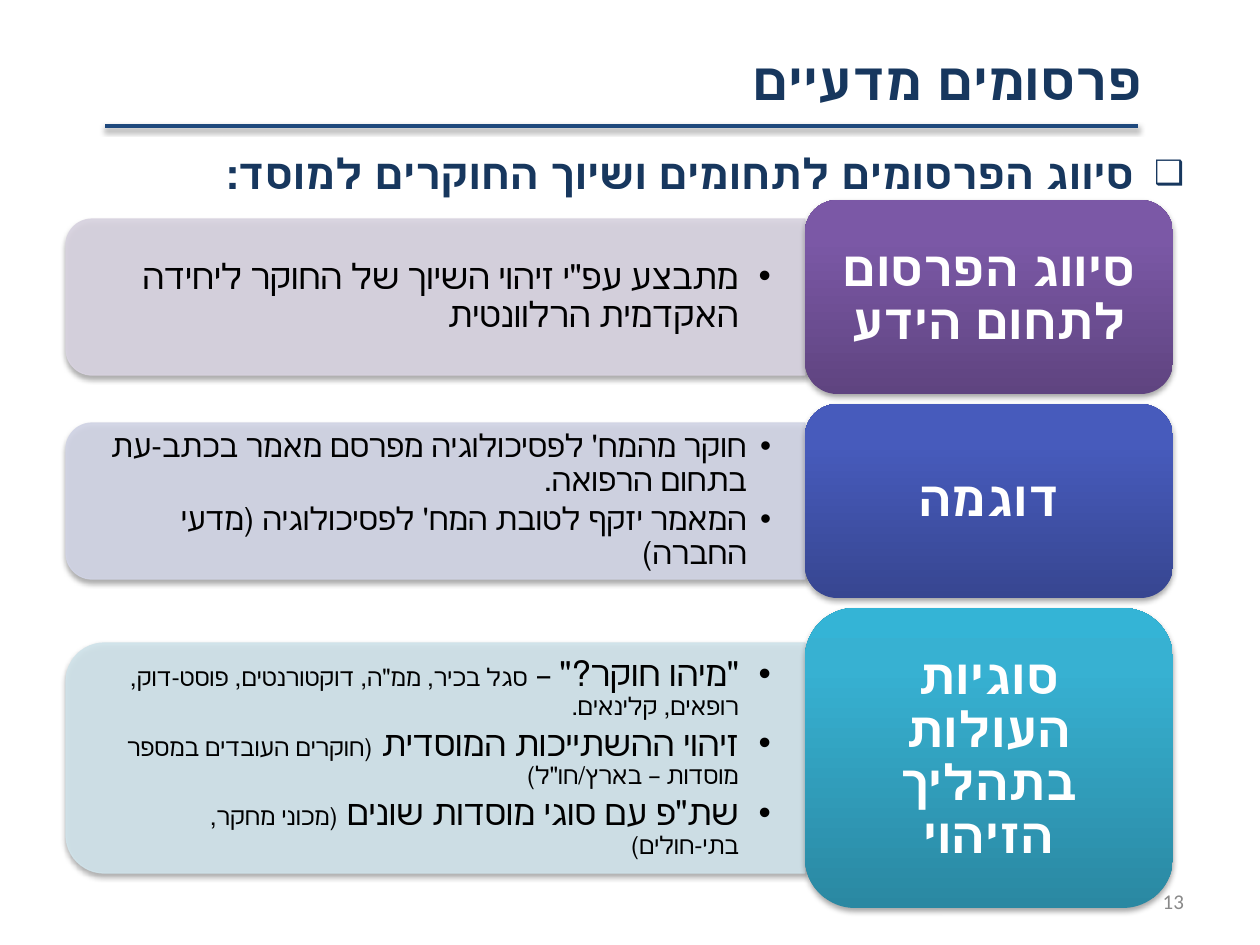
from copy import deepcopy
from dataclasses import dataclass

from lxml import etree
from pptx import Presentation
from pptx import util as u
from pptx.dml.color import RGBColor
from pptx.enum import lang, shapes, text
from pptx.oxml import ns

EMU_PER_PX = 914400 / 126
COLORS = {"navy": "17375E", "rule": "1F497D", "grey": "898989",
          "black": "000000", "white": "FFFFFF"}
LEFT, SPLIT, RIGHT = 66, 805, 1173   # panel start, panel/block border, block end
FIRST_TOP, GAP = 200, 10
CORNER_INSET = 0.05                  # share of a panel's height taken by its corners


@dataclass
class Span:
    text: str
    size: int


@dataclass
class Row:
    heading: str
    bullets: list[list[Span]]
    height: int
    panel_height: int
    indent: int
    panel_color: str
    gradient: tuple[str, str, str]


ROWS = [
    Row("סיווג הפרסום לתחום הידע",
        [[Span("מתבצע עפ\"י זיהוי השיוך של החוקר ליחידה האקדמית הרלוונטית", 20)]],
        194, 156, 32, "D8D3E0", ("5F4480", "7B58A6", "7C57A8")),
    Row("דוגמה",
        [[Span("חוקר מהמח' לפסיכולוגיה מפרסם מאמר בכתב-עת בתחום הרפואה.", 18)],
         [Span("המאמר יזקף לטובת המח' לפסיכולוגיה (מדעי החברה)", 18)]],
        194, 156, 24, "D1D4E5", ("374691", "475BBC", "455ABF")),
    Row("סוגיות העולות בתהליך הזיהוי",
        [[Span("\"מיהו חוקר?\"", 20), Span(" – ", 18),
          Span("סגל בכיר, ממ\"ה, דוקטורנטים, פוסט-דוק, רופאים, קלינאים.", 14)],
         [Span("זיהוי ההשתייכות המוסדית ", 20),
          Span("(חוקרים העובדים במספר מוסדות – בארץ/חו\"ל)", 14)],
         [Span("שת\"פ עם סוגי מוסדות שונים ", 20), Span("(מכוני מחקר, בתי-חולים)", 14)]],
        300, 230, 32, "D0E3EA", ("2A88A2", "37B1D2", "34B4D6")),
]


def px(length: float) -> int:
    return round(length * EMU_PER_PX)


def rgb(color: str) -> RGBColor:
    return RGBColor.from_string(COLORS.get(color, color))


def add_child(parent, tag: str, **attributes):
    return etree.SubElement(parent, ns.qn(tag), attributes)


def add_shadow(shape, alpha: int, distance: float) -> None:
    """Add a soft downward shadow; call once fill and line are set."""
    properties = shape.element.spPr
    for old in properties.findall(ns.qn("a:effectLst")):
        properties.remove(old)
    effects = add_child(properties, "a:effectLst")
    shadow = add_child(effects, "a:outerShdw", blurRad="40000", dist=str(u.Pt(distance)),
                       dir="5400000", rotWithShape="0")
    color = add_child(shadow, "a:srgbClr", val=COLORS["black"])
    add_child(color, "a:alpha", val=str(alpha * 1000))


def set_alpha(fill_element, percent: int) -> None:
    color = fill_element.find(".//" + ns.qn("a:srgbClr"))
    add_child(color, "a:alpha", val=str(percent * 1000))


def set_frame(frame, anchor, side: int = 13, top: int = 6) -> None:
    frame.word_wrap = True
    frame.auto_size = text.MSO_AUTO_SIZE.NONE
    frame.vertical_anchor = anchor
    frame.margin_left = frame.margin_right = px(side)
    frame.margin_top = frame.margin_bottom = px(top)


def add_bullet(para, char: str, indent: int, percent: int = 100) -> None:
    properties = para._p.get_or_add_pPr()
    properties.set("marL", str(px(indent)))
    properties.set("indent", str(-px(indent)))
    add_child(properties, "a:buSzPct", val=str(percent * 1000))
    add_child(properties, "a:buFont", typeface="Arial")
    add_child(properties, "a:buChar", char=char)


def write(para, spans: list[Span], font_name: str, color: str, align,
          bold: bool = False, rtl: bool = True) -> None:
    para.alignment = align
    font = para.font
    font.size, font.bold, font.name = u.Pt(spans[0].size), bold, font_name
    font.color.rgb = rgb(color)
    if rtl:
        para._p.get_or_add_pPr().set("rtl", "1")
    for span in spans:
        run = para.add_run()
        run.text = span.text
        if rtl:
            run.font.language_id = lang.MSO_LANGUAGE_ID.HEBREW
        if span.size != spans[0].size:
            run.font.size = u.Pt(span.size)


def add_box(page, left: float, top: float, width: float, height: float):
    return page.shapes.add_textbox(px(left), px(top), px(width), px(height))


def add_title(page) -> None:
    title = page.shapes.title
    title.left, title.top, title.width, title.height = px(105), px(42), px(1050), px(105)
    set_frame(title.text_frame, text.MSO_ANCHOR.TOP)
    para = title.text_frame.paragraphs[0]
    para.space_before = u.Pt(6)
    write(para, [Span("פרסומים מדעיים", 30)], "Cabin", "navy", text.PP_ALIGN.RIGHT, bold=True)

    rule = page.shapes.add_connector(shapes.MSO_CONNECTOR.STRAIGHT,
                                     px(1138), px(126), px(105), px(126))
    rule.line.color.rgb = rgb("rule")
    rule.line.width = u.Pt(2)
    add_shadow(rule, 38, 1.6)


def add_subtitle(page) -> None:
    box = add_box(page, 53, 136, 1144, 66)
    set_frame(box.text_frame, text.MSO_ANCHOR.MIDDLE)
    para = box.text_frame.paragraphs[0]
    add_bullet(para, "❑", 50, 80)
    para.line_spacing, para.space_after = 1.14, u.Pt(12)
    write(para, [Span("סיווג הפרסומים לתחומים ושיוך החוקרים למוסד:", 24)],
          "Arial", "navy", text.PP_ALIGN.JUSTIFY, bold=True)


def add_page_number(page) -> None:
    box = add_box(page, 903, 876, 294, 50)
    set_frame(box.text_frame, text.MSO_ANCHOR.MIDDLE)
    write(box.text_frame.paragraphs[0], [Span("13", 12)], "Calibri", "grey",
          text.PP_ALIGN.RIGHT, rtl=False)


def add_panel(page, row: Row, middle: float) -> None:
    """Draw the pale panel, rounded on its left side, and its bullets."""
    width, height = SPLIT - LEFT, row.panel_height
    center = (LEFT + SPLIT) / 2
    panel = page.shapes.add_shape(
        shapes.MSO_SHAPE.ROUND_2_SAME_RECTANGLE,
        px(center - height / 2), px(middle - width / 2), px(height), px(width))
    panel.rotation = 270
    panel.fill.solid()
    panel.fill.fore_color.rgb = panel.line.color.rgb = rgb(row.panel_color)
    panel.line.width = u.Pt(0.75)
    properties = panel.element.spPr
    set_alpha(properties.find(ns.qn("a:solidFill")), 90)
    set_alpha(properties.find(ns.qn("a:ln")), 90)
    add_shadow(panel, 35, 1.8)

    inset = height * CORNER_INSET
    box = add_box(page, LEFT + inset, middle - height / 2 + inset,
                  width - inset, height - 2 * inset)
    set_frame(box.text_frame, text.MSO_ANCHOR.MIDDLE, 34, 18)
    for index, spans in enumerate(row.bullets):
        para = box.text_frame.add_paragraph() if index else box.text_frame.paragraphs[0]
        add_bullet(para, "•", row.indent)
        para.line_spacing, para.space_after = 0.9, u.Pt(3)
        write(para, spans, "Cabin", "black", text.PP_ALIGN.RIGHT)


def add_block(page, row: Row, top: int) -> None:
    """Draw the gradient block with the row's heading."""
    block = page.shapes.add_shape(shapes.MSO_SHAPE.ROUNDED_RECTANGLE, px(SPLIT), px(top),
                                  px(RIGHT - SPLIT), px(row.height))
    block.fill.gradient()
    block.fill.gradient_angle = 90
    stop_list = block.element.spPr.find(".//" + ns.qn("a:gsLst"))
    stop_list.append(deepcopy(stop_list[-1]))
    for stop, position, color in zip(block.fill.gradient_stops, (0, 0.8, 1), row.gradient):
        stop.position = position
        stop.color.rgb = rgb(color)
    block.line.fill.background()
    add_shadow(block, 35, 1.8)
    set_frame(block.text_frame, text.MSO_ANCHOR.MIDDLE, 15, 8)
    para = block.text_frame.paragraphs[0]
    para.line_spacing, para.space_after = 0.9, u.Pt(10)
    write(para, [Span(row.heading, 28)], "Cabin", "white", text.PP_ALIGN.CENTER, bold=True)


def main() -> None:
    deck = Presentation()
    deck.slide_width, deck.slide_height = u.Inches(10), u.Inches(7.5)
    page = deck.slides.add_slide(deck.slide_layouts[5])
    add_title(page)
    add_subtitle(page)
    add_page_number(page)
    top = FIRST_TOP
    for row in ROWS:
        add_panel(page, row, top + row.height / 2)
        add_block(page, row, top)
        top += row.height + GAP
    deck.save("out.pptx")


if __name__ == "__main__":
    main()
